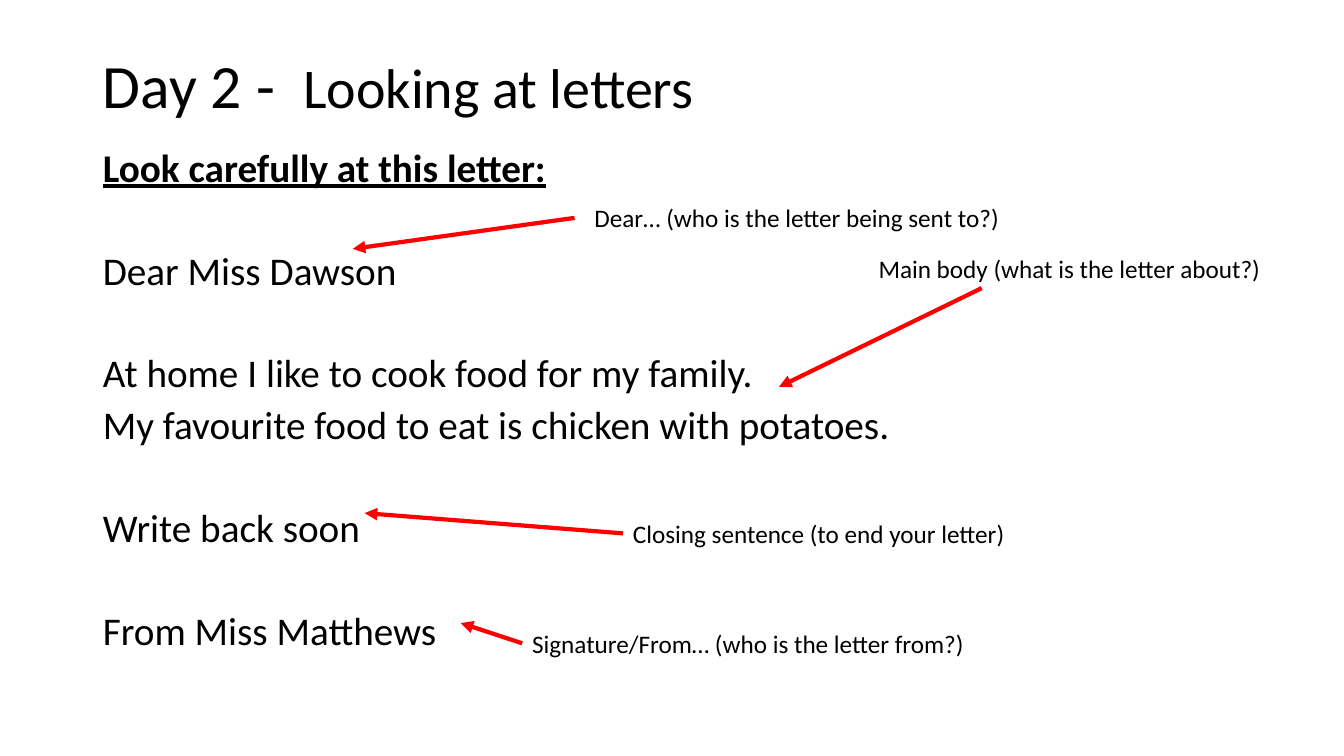
from lxml.etree import SubElement
from pptx import Presentation
from pptx.dml.color import RGBColor
from pptx.enum.shapes import MSO_CONNECTOR
from pptx.enum.text import MSO_ANCHOR, MSO_AUTO_SIZE, PP_ALIGN
from pptx.oxml.ns import qn
from pptx.util import Cm, Pt

BLACK = "000000"
RED = "FF0000"
LINE_GAP = 10
SECTION_GAP = 46.5

LETTER = [
    ("Dear Miss Dawson", SECTION_GAP),
    ("At home I like to cook food for my family.", SECTION_GAP),
    ("My favourite food to eat is chicken with potatoes.", LINE_GAP),
    ("Write back soon", SECTION_GAP),
    ("From Miss Matthews", SECTION_GAP),
]

CALLOUTS = [
    ("Dear… (who is the letter being sent to?)",
     (14.73, 4.98, 10.85, 1.02), (-0.25, 0.51), (-5.59, 0.78)),
    ("Main body (what is the letter about?)",
     (21.89, 6.27, 10.26, 1.02), (2.85, 0.99), (-5.11, 2.49)),
    ("Closing sentence (to end your letter)",
     (15.7, 12.93, 10.01, 1.02), (0, 0.51), (-6.51, -0.51)),
    ("Signature/From… (who is the letter from?)",
     (13.16, 15.7, 11.53, 1.02), (0, 0.51), (-1.55, -0.51)),
]


def color(hex_code):
    return RGBColor.from_string(hex_code)


def write(paragraph, text, size=28, bold=False, underline=False, tracking=None):
    run = paragraph.add_run()
    run.text = text
    font = run.font
    font.name = "Calibri"
    font.size = Pt(size)
    font.bold = bold
    font.underline = underline
    font.color.rgb = color(BLACK)
    if tracking:
        font._element.set("spc", str(tracking * 100))


def place(shape, box):
    shape.left, shape.top, shape.width, shape.height = map(Cm, box)


def add_heading(slide, box):
    heading = slide.shapes.title
    place(heading, box)
    heading.text_frame.vertical_anchor = MSO_ANCHOR.MIDDLE
    heading.text_frame.auto_size = MSO_AUTO_SIZE.NONE
    line = heading.text_frame.paragraphs[0]
    line.alignment = PP_ALIGN.LEFT
    line.line_spacing = 0.9
    write(line, "Day 2 -", size=44)
    write(line, " ", size=44, tracking=10)
    write(line, "Looking at letters", size=40)


def add_letter_line(paragraph, text, gap, **style):
    paragraph.line_spacing = 0.8
    paragraph.space_before = Pt(gap)
    properties = paragraph._p.get_or_add_pPr()
    properties.set("marL", "0")
    properties.set("indent", "0")
    SubElement(properties, qn("a:buNone"))
    write(paragraph, text, **style)


def add_letter(slide, box):
    letter = slide.placeholders[1]
    place(letter, box)
    frame = letter.text_frame
    frame.auto_size = MSO_AUTO_SIZE.NONE
    add_letter_line(frame.paragraphs[0], "Look carefully at this letter:",
                    LINE_GAP, bold=True, underline=True)
    for text, gap in LETTER:
        add_letter_line(frame.add_paragraph(), text, gap)


def add_callout(slide, text, box, start, reach):
    label = slide.shapes.add_textbox(*map(Cm, box))
    label.text_frame.word_wrap = False
    label.text_frame.auto_size = MSO_AUTO_SIZE.SHAPE_TO_FIT_TEXT
    write(label.text_frame.paragraphs[0], text, size=18)

    left, top = box[0] + start[0], box[1] + start[1]
    arrow = slide.shapes.add_connector(
        MSO_CONNECTOR.STRAIGHT, Cm(left), Cm(top),
        Cm(left + reach[0]), Cm(top + reach[1]))
    arrow.line.color.rgb = color(RED)
    arrow.line.width = Pt(3)
    SubElement(arrow.line._get_or_add_ln(), qn("a:tailEnd"), type="triangle")
    SubElement(arrow._element.spPr, qn("a:effectLst"))


def main():
    deck = Presentation()
    deck.slide_width, deck.slide_height = Cm(33.87), Cm(19.05)
    slide = deck.slides.add_slide(deck.slide_layouts[1])
    add_heading(slide, (2.34, 0.94, 29.21, 2.57))
    add_letter(slide, (2.34, 3.71, 29.21, 13.44))
    for text, box, start, reach in CALLOUTS:
        add_callout(slide, text, box, start, reach)
    deck.save("out.pptx")


if __name__ == "__main__":
    main()
